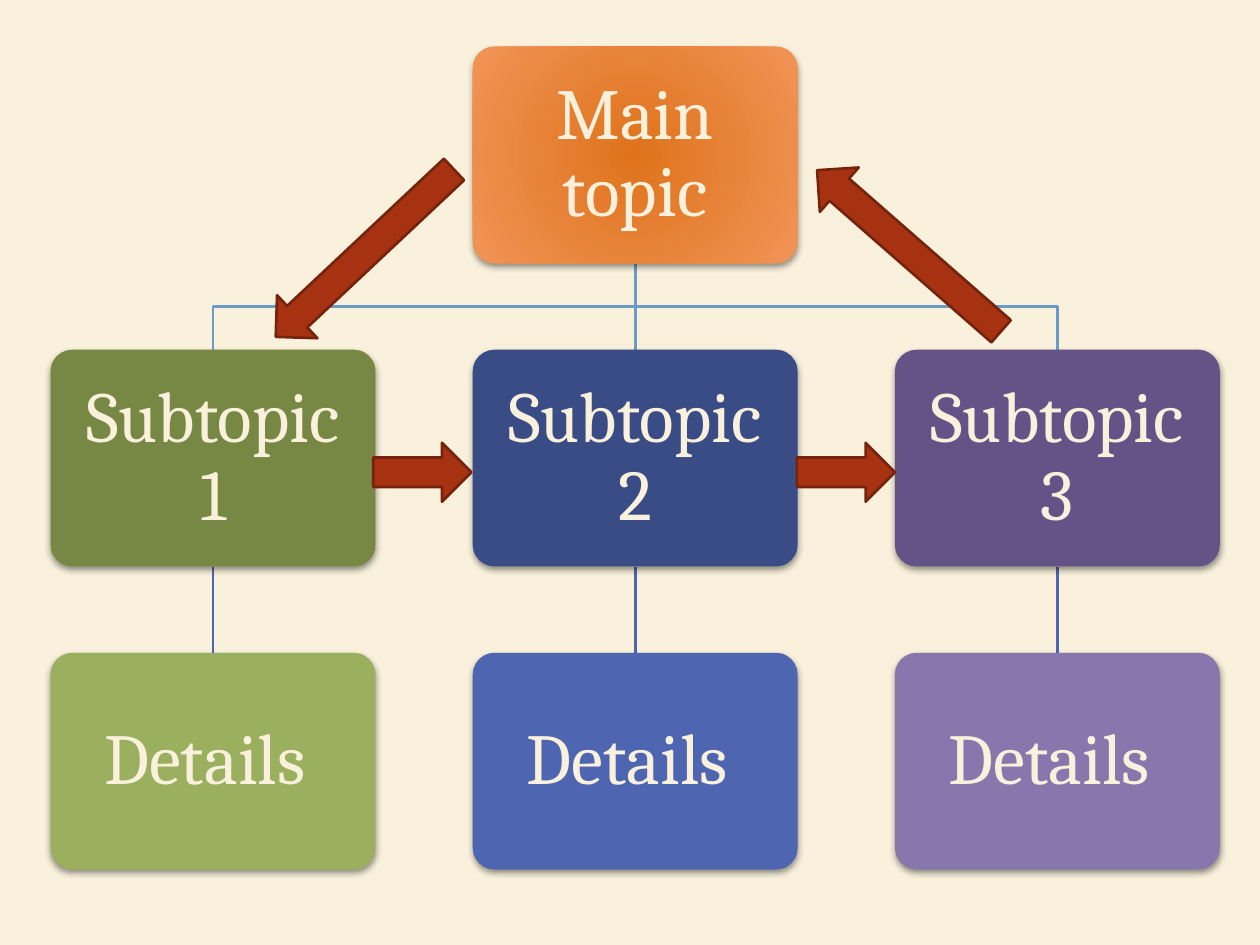
from lxml import etree
from pptx import Presentation
from pptx import util as u
from pptx.dml import color as col
from pptx.enum import shapes, text
from pptx.oxml import parse_xml
from pptx.oxml.ns import nsdecls, qn

Cm = u.Cm
HUES = {
    "cream": "F9F1DC", "main": "DF731B", "glow": "F09457",
    "sub": ["768843", "3A4C86", "655287"],
    "detail": ["9BB05E", "4E66B2", "8976AC"],
    "branch": "6B9BC7", "stem": "4E66B2",
    "arrow": "A63212", "edge": "75230C",
}
LEFT, TOP = 1.02, 0.94
WIDE, HIGH = 6.55, 4.37
STEP, DROP = 8.51, 6.11
MID = LEFT + STEP + WIDE / 2


def rgb(name):
    return col.RGBColor.from_string(name)


def add_box(x, y, words, hue):
    """Add a rounded, softly shadowed box with centred text."""
    box = slide.shapes.add_shape(
        shapes.MSO_SHAPE.ROUNDED_RECTANGLE, Cm(x), Cm(y), Cm(WIDE), Cm(HIGH))
    box.adjustments[0] = 0.1
    box.fill.solid()
    box.fill.fore_color.rgb = rgb(hue)
    box.line.fill.background()
    box.shadow.inherit = False
    glow = box._element.spPr.find(qn("a:effectLst"))
    glow.append(parse_xml(
        f'<a:outerShdw {nsdecls("a")} blurRad="50800" dist="25400" '
        'dir="5040000" rotWithShape="0"><a:srgbClr val="000000">'
        '<a:alpha val="44000"/></a:srgbClr></a:outerShdw>'))
    frame = box.text_frame
    frame.word_wrap = True
    frame.vertical_anchor = text.MSO_ANCHOR.MIDDLE
    frame.margin_left = frame.margin_right = Cm(0.5)
    frame.margin_top = frame.margin_bottom = Cm(0.5)
    para = frame.paragraphs[0]
    para.alignment = text.PP_ALIGN.CENTER
    para.line_spacing = 0.9
    run = para.add_run()
    run.text = words
    run.font.name = "Cambria"
    run.font.size = u.Pt(41)
    run.font.color.rgb = rgb(HUES["cream"])
    return box


deck = Presentation()
deck.slide_width, deck.slide_height = Cm(25.4), Cm(19.05)
slide = deck.slides.add_slide(deck.slide_layouts[6])
slide.background.fill.solid()
slide.background.fill.fore_color.rgb = rgb(HUES["cream"])

# Branches from the main topic to the outer subtopics
start, end = TOP + HIGH, TOP + DROP
bend = (start + end) / 2
for side in (-1, 1):
    x = MID + side * STEP
    path = slide.shapes.build_freeform(Cm(MID), Cm(start))
    path.add_line_segments(
        [(Cm(MID), Cm(bend)), (Cm(x), Cm(bend)), (Cm(x), Cm(end))],
        close=False)
    branch = path.convert_to_shape()
    branch.fill.background()
    branch.line.color.rgb = rgb(HUES["branch"])
    branch.line.width = u.Pt(1.5)
    branch.shadow.inherit = False

# Straight stems: main to the middle subtopic, then each subtopic to details
stems = [(MID, 0, "branch")]
stems += [(MID + i * STEP, 1, "stem") for i in (-1, 0, 1)]
for x, row, hue in stems:
    y = TOP + row * DROP
    stem = slide.shapes.add_connector(
        shapes.MSO_CONNECTOR.STRAIGHT,
        Cm(x), Cm(y + HIGH), Cm(x), Cm(y + DROP))
    stem.line.color.rgb = rgb(HUES[hue])
    stem.line.width = u.Pt(1.5)
    etree.SubElement(stem._element.spPr, qn("a:effectLst"))

# Main topic, with a radial gradient
main = add_box(LEFT + STEP, TOP, "Main topic", HUES["main"])
main.fill.gradient()
for stop, hue in zip(main.fill.gradient_stops, ("main", "glow")):
    stop.color.rgb = rgb(HUES[hue])
grad = main._element.spPr.find(qn("a:gradFill"))
grad.replace(grad.find(qn("a:lin")), parse_xml(
    f'<a:path {nsdecls("a")} path="circle"><a:fillToRect l="40000" '
    't="100000" r="40000" b="100000"/></a:path>'))

# Subtopics and their details
for i in range(3):
    x = LEFT + i * STEP
    add_box(x, TOP + DROP, f"Subtopic {i + 1}", HUES["sub"][i])
    add_box(x, TOP + 2 * DROP, "Details ", HUES["detail"][i])

# Arrows that show the reading order: left, top, length, turn
for x, y, size, turn in [
    (6.76, 2.64, 4.93, 46.8),
    (7.92, 8.53, 1.98, 270),
    (16.46, 8.53, 1.98, 270),
    (17.73, 2.59, 4.93, 131.2),
]:
    arrow = slide.shapes.add_shape(
        shapes.MSO_SHAPE.DOWN_ARROW, Cm(x), Cm(y), Cm(1.19), Cm(size))
    arrow.rotation = turn
    arrow.fill.solid()
    arrow.fill.fore_color.rgb = rgb(HUES["arrow"])
    arrow.line.color.rgb = rgb(HUES["edge"])
    arrow.line.width = u.Pt(1.5)
    arrow.shadow.inherit = False

deck.save("out.pptx")
